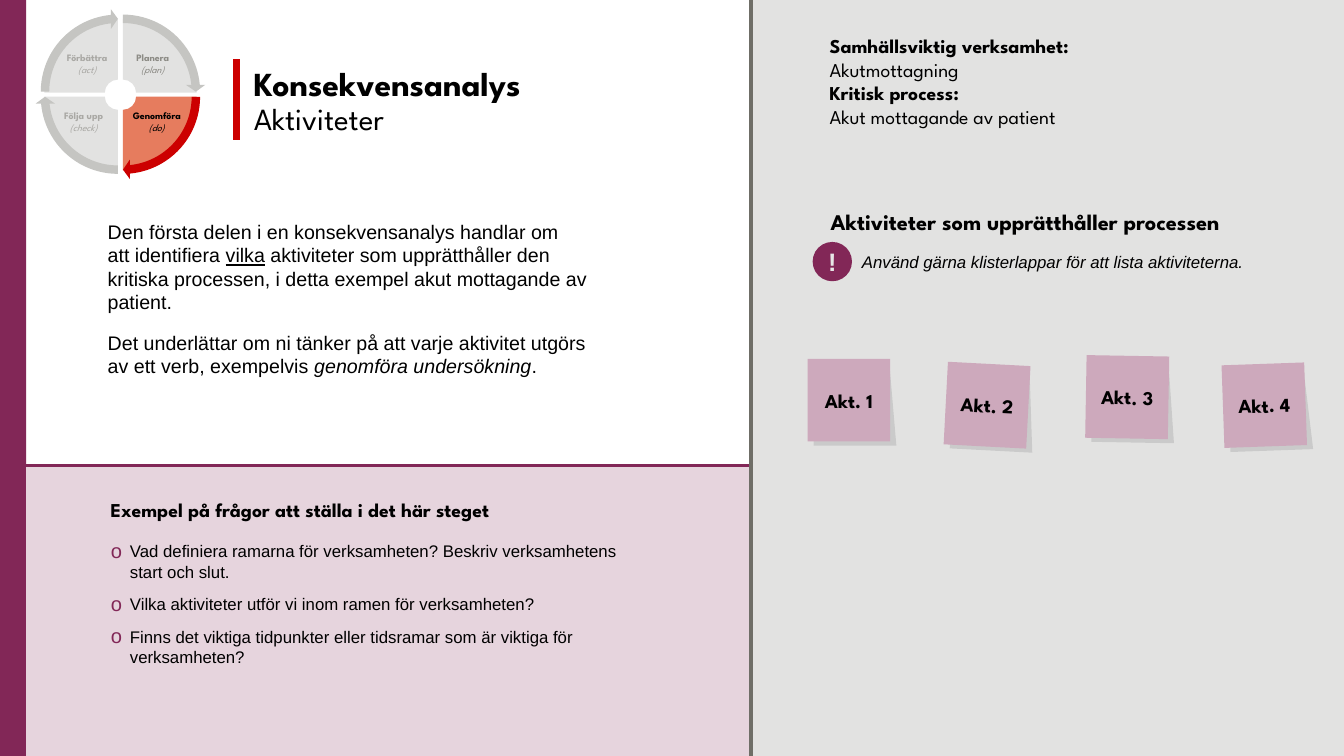
import lxml.etree
import pptx
import pptx.dml.color
import pptx.enum.shapes
import pptx.enum.text
import pptx.oxml.ns
import pptx.util

Inches = pptx.util.Inches
SHAPES = pptx.enum.shapes.MSO_SHAPE
ANCHOR = pptx.enum.text.MSO_ANCHOR
ALIGN = pptx.enum.text.PP_ALIGN
AUTO_SIZE = pptx.enum.text.MSO_AUTO_SIZE

PLUM = "822757"
RED = "CC0000"
PALE_GREY = "E2E2E1"
RING_GREY = "C5C5C2"
HEADING = {"name": "League Spartan", "size": 14, "bold": True}
BODY = {"name": "Arial", "size": 14}
CENTRED = {"alignment": ALIGN.CENTER}


def colour(value):
    return pptx.dml.color.RGBColor.from_string(value)


def apply(target, values):
    for name, value in values.items():
        setattr(target, name, value)


def add_child(parent, tag, **attributes):
    child = lxml.etree.SubElement(parent, pptx.oxml.ns.qn(tag))
    for name, value in attributes.items():
        child.set(name, value)
    return child


def paint(shape, fill):
    shape.shadow.inherit = False
    shape.fill.solid()
    shape.fill.fore_color.rgb = colour(fill)
    shape.line.fill.background()
    return shape


def add_shape(shapes, kind, box, fill):
    return paint(shapes.add_shape(kind, *map(Inches, box)), fill)


def add_outline(shapes, points, fill):
    points = [(Inches(x), Inches(y)) for x, y in points]
    builder = shapes.build_freeform(*points[0])
    builder.add_line_segments(points[1:], close=True)
    return paint(builder.convert_to_shape(), fill)


def add_line(slide, start, end, line_colour, width):
    line = slide.shapes.add_connector(
        pptx.enum.shapes.MSO_CONNECTOR.STRAIGHT, *map(Inches, start + end))
    line.line.color.rgb = colour(line_colour)
    line.line.width = pptx.util.Pt(width)
    add_child(line.element.spPr, "a:effectLst")


def write(shape, paragraphs, font, layout=None, text_colour="000000", bullet=False):
    frame = shape.text_frame
    for index, runs in enumerate(paragraphs):
        paragraph = frame.add_paragraph() if index else frame.paragraphs[0]
        if bullet:
            properties = paragraph._p.get_or_add_pPr()
            properties.set("marL", str(Inches(0.19)))
            properties.set("indent", str(-Inches(0.19)))
            add_child(add_child(properties, "a:buClr"), "a:srgbClr", val=PLUM)
            add_child(properties, "a:buSzPct", val="120000")
            add_child(properties, "a:buFont", typeface="Arial")
            add_child(properties, "a:buChar", char="o")
        apply(paragraph, layout or {})
        for text, changes in runs:
            for part, line in enumerate(text.split("\n")):
                if part:
                    paragraph.add_line_break()
                if line:
                    run = paragraph.add_run()
                    run.text = line
                    values = {**font, **changes}
                    apply(run.font, {**values, "size": pptx.util.Pt(values["size"])})
                    run.font.color.rgb = colour(text_colour)


def add_text(shapes, box, paragraphs, font, layout=None, wrap=True, **options):
    shape = shapes.add_textbox(*map(Inches, box))
    apply(shape.text_frame, {"word_wrap": wrap, "auto_size": AUTO_SIZE.SHAPE_TO_FIT_TEXT})
    write(shape, paragraphs, font, layout, **options)


def add_introduction(slide, left, top):
    shapes = slide.shapes
    add_text(shapes, (left + 2.16, top + 0.62, 4.23, 0.83),
             [[("Konsekvensanalys\n", {}), ("Aktiviteter", {"size": 22, "bold": False})]],
             {**HEADING, "size": 24}, {"line_spacing": 0.9})
    add_line(slide, (left + 2.09, top + 0.59), (left + 2.09, top + 1.39), RED, 5)
    add_text(shapes, (left + 0.71, top + 2.13, 5.04, 1.68), [
        [("Den första delen i en konsekvensanalys handlar om \natt identifiera ", {}),
         ("vilka", {"underline": True}),
         (" aktiviteter som upprätthåller den kritiska processen, i detta exempel "
          "akut mottagande av patient.", {})],
        [("Det underlättar om ni tänker på att varje aktivitet utgörs av ett verb, "
          "exempelvis ", {}),
         ("genomföra undersökning", {"italic": True}), (".", {})],
    ], BODY, {"space_after": pptx.util.Pt(12)})


def add_questions(slide, left, top, width, height):
    shapes = slide.shapes
    add_shape(shapes, SHAPES.RECTANGLE, (left, top, width, height), "E6D4DD")
    add_line(slide, (left, top - 0.01), (left + width, top - 0.01), PLUM, 2.5)
    add_text(shapes, (left + 0.74, top + 0.26, 4.3, 0.34),
             [[("Exempel på frågor att ställa i det här steget", {})]], HEADING, wrap=False)
    questions = [
        "Vad definiera ramarna för verksamheten? Beskriv verksamhetens start och slut.",
        "Vilka aktiviteter utför vi inom ramen för verksamheten?",
        "Finns det viktiga tidpunkter eller tidsramar som är viktiga för verksamheten?",
    ]
    add_text(shapes, (left + 0.74, top + 0.69, 5.48, 1.36),
             [[(question, {})] for question in questions], {**BODY, "size": 12},
             {"space_after": pptx.util.Pt(9)}, bullet=True)


def add_note(slide, left, top, rotation, label):
    size = 0.82
    shapes = slide.shapes.add_group_shape().shapes
    x, y = left + 0.06, top + 0.04
    shadow = add_outline(shapes, [(x, y), (x + 0.75, y), (x + size, y + size),
                                  (x, y + size)], "000000")
    shadow_colour = shadow.element.spPr.find(".//" + pptx.oxml.ns.qn("a:srgbClr"))
    add_child(shadow_colour, "a:alpha", val="10000")
    note = add_shape(shapes, SHAPES.RECTANGLE, (left, top, size, size), "CDA9BC")
    shadow.rotation = note.rotation = rotation
    note.text_frame.vertical_anchor = ANCHOR.MIDDLE
    write(note, [[(label, {})]], HEADING, CENTRED)


def add_process_panel(slide, left, top, width, height):
    shapes = slide.shapes
    add_shape(shapes, SHAPES.RECTANGLE, (left, top, width, height), PALE_GREY)
    add_line(slide, (left, top), (left, top + height), "6F6E67", 2.5)
    add_text(shapes, (left + 0.68, top + 0.29, 3.97, 1.04), [[
        ("Samhällsviktig verksamhet: \n", {}), ("Akutmottagning\n", {"bold": False}),
        ("Kritisk process: \n", {}), ("Akut mottagande av patient", {"bold": False}),
    ]], HEADING)
    add_text(shapes, (left + 0.69, top + 2.02, 4.82, 0.37),
             [[("Aktiviteter som upprätthåller processen", {})]], {**HEADING, "size": 16})
    add_text(shapes, (left + 1, top + 2.45, 5, 0.3),
             [[("Använd gärna klisterlappar för att lista aktiviteterna.", {})]],
             {**BODY, "size": 12, "italic": True})
    badge = add_shape(shapes, SHAPES.OVAL, (left + 0.61, top + 2.4, 0.39, 0.39), PLUM)
    margins = dict.fromkeys(["margin_left", "margin_top", "margin_right", "margin_bottom"], 0)
    apply(badge.text_frame, {**margins, "vertical_anchor": ANCHOR.MIDDLE})
    write(badge, [[("!", {})]], {**BODY, "size": 18, "bold": True}, CENTRED, "E7E6E6")
    notes = [(0.56, 3.56, 0), (1.93, 3.61, 3), (3.32, 3.53, 1), (4.68, 3.61, 358)]
    for number, (x, y, rotation) in enumerate(notes, 1):
        add_note(slide, left + x, top + y, rotation, f"Akt. {number}")


def bend(segment, start, end, centre):
    segment.tag = pptx.oxml.ns.qn("a:cubicBezTo")
    controls = [[p + 0.55 * (q - c) for p, q, c in zip(first, second, centre)]
                for first, second in [(start, end), (end, start)]]
    for index, (x, y) in enumerate(controls):
        point = lxml.etree.Element(pptx.oxml.ns.qn("a:pt"), x=str(round(x)), y=str(round(y)))
        segment.insert(index, point)


def add_quarter(shapes, x, y, across, down, fill):
    outer, inner = 0.73, 0.13
    corners = [(x, y + down * outer), (x + across * outer, y),
               (x + across * inner, y), (x, y + down * inner)]
    quarter = add_outline(shapes, corners, fill)
    origin = quarter.left, quarter.top
    centre, *points = [(Inches(a) - origin[0], Inches(b) - origin[1])
                       for a, b in [(x, y)] + corners]
    segments = list(quarter.element.spPr.iter(pptx.oxml.ns.qn("a:lnTo")))
    bend(segments[0], points[0], points[1], centre)
    bend(segments[2], points[2], points[3], centre)


def add_cycle(slide, left, top):
    shapes = slide.shapes.add_group_shape().shapes
    near, far = 0.82, 0.87
    quarters = [
        (far, near + 0.01, 1, -1, 162, PALE_GREY, RING_GREY),
        (far, far, 1, 1, 0, "E67C5E", RED),
        (near, far, -1, 1, 54, PALE_GREY, RING_GREY),
        (near, near + 0.01, -1, -1, 108, PALE_GREY, RING_GREY),
    ]
    for x, y, across, down, begin, fill, ring in quarters:
        add_quarter(shapes, left + x, top + y, across, down, fill)
    for x, y, across, down, begin, fill, ring in quarters:
        arrow = add_shape(shapes, SHAPES.CIRCULAR_ARROW,
                          (left + x - near, top + (0.05 if down > 0 else 0), 1.64, 1.64), ring)
        for index, value in enumerate([0.051, 3.275, begin + 50.725, begin, 0.059]):
            arrow.adjustments[index] = value
    labels = [
        ((0.2, 0.39, 0.63), "Förbättra", "(act)", "A9A8A4", False),
        ((0.16, 0.96, 0.64), "Följa upp", "(check)", "A9A8A4", False),
        ((0.83, 0.96, 0.75), "Genomföra", "(do)", "000000", False),
        ((0.8, 0.39, 0.73), "Planera", "(plan)", "8C8B85", True),
    ]
    for (x, y, width), name, step, text_colour, wrap in labels:
        add_text(shapes, (left + x, top + y, width, 0.33),
                 [[(name, {})], [(step, {"bold": False, "italic": True})]],
                 {**HEADING, "size": 7},
                 {**CENTRED, "line_spacing": 0.9, "space_after": pptx.util.Pt(1)},
                 wrap, text_colour=text_colour)


def main():
    presentation = pptx.Presentation()
    apply(presentation, {"slide_width": Inches(13.33), "slide_height": Inches(7.5)})
    slide = presentation.slides.add_slide(presentation.slide_layouts[6])
    add_shape(slide.shapes, SHAPES.RECTANGLE, (0, 0, 0.26, 7.5), PLUM)
    add_introduction(slide, 0.26, 0)
    add_questions(slide, 0.26, 4.63, 7.19, 2.87)
    add_process_panel(slide, 7.45, 0, 5.88, 7.5)
    add_cycle(slide, 0.35, 0.09)
    presentation.save("out.pptx")


if __name__ == "__main__":
    main()
